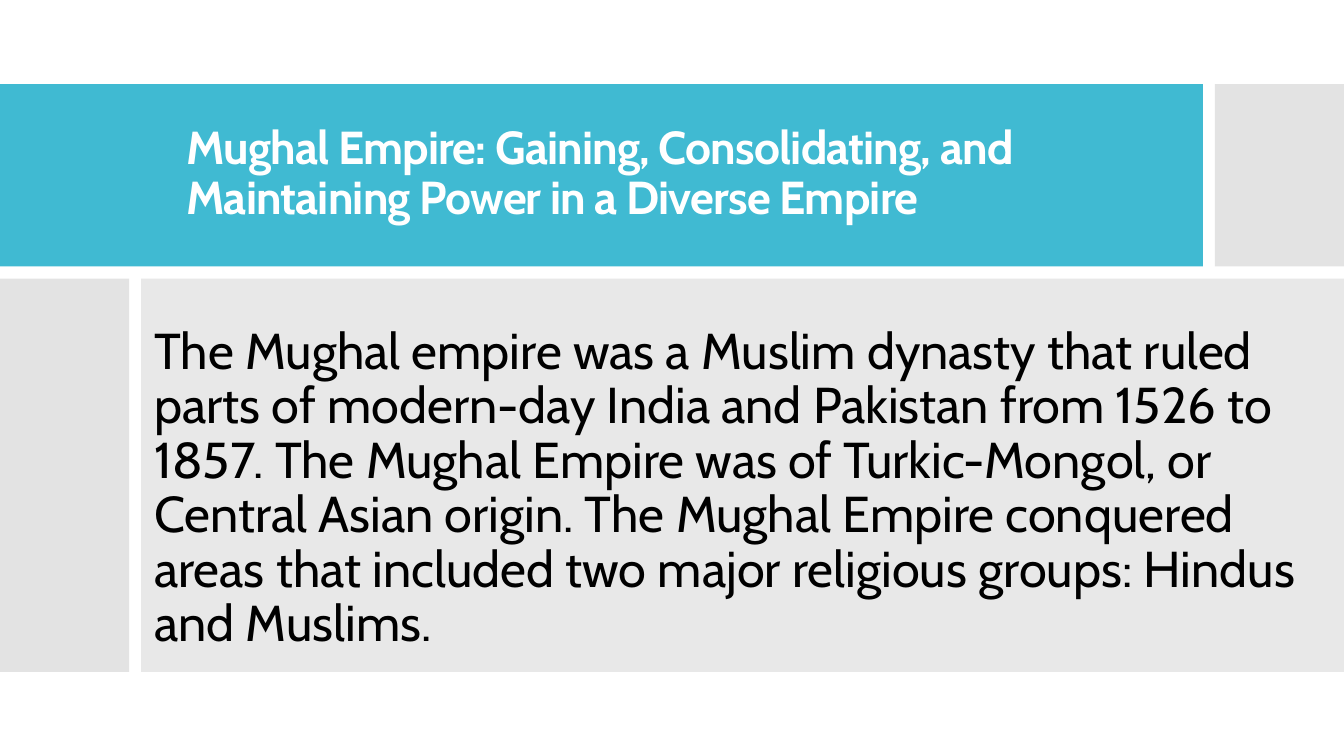
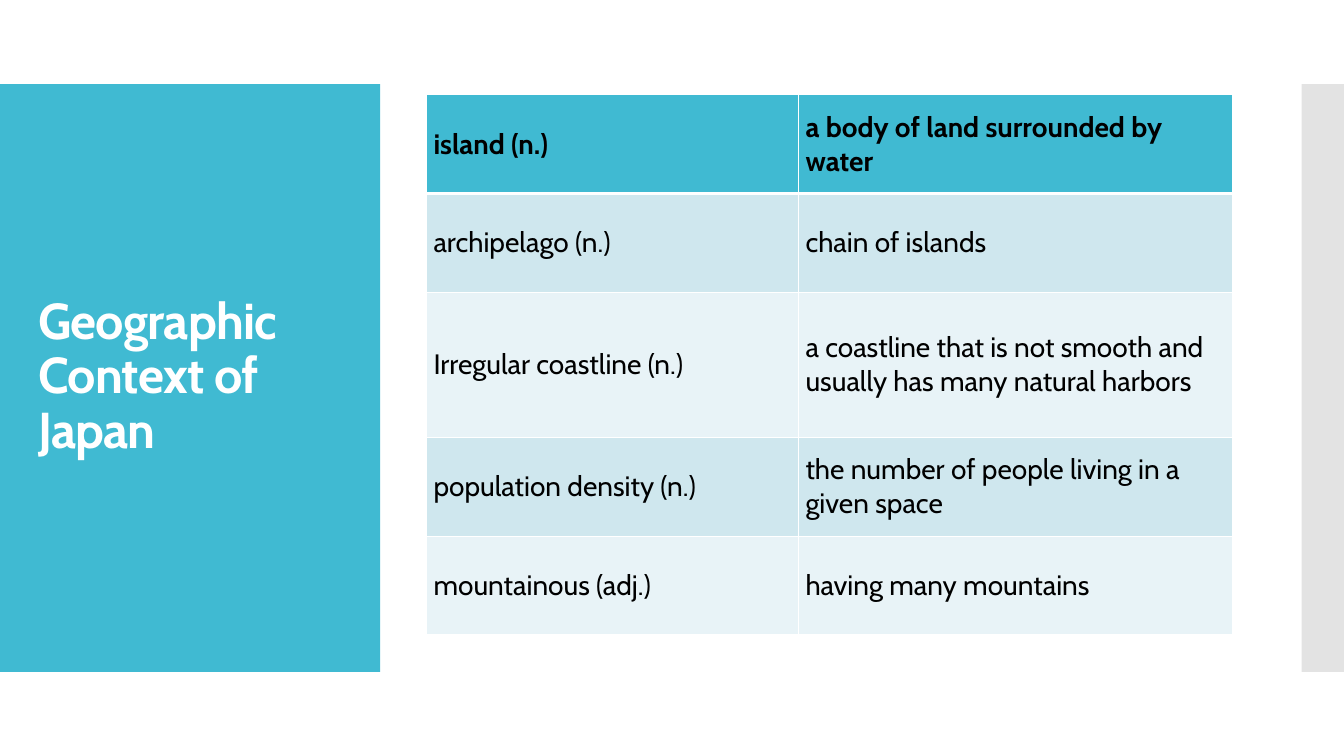
"""Build two history slides: an empire overview and a vocabulary table."""
from lxml import etree
from pptx import Presentation
from pptx.dml.color import RGBColor
from pptx.enum.shapes import MSO_SHAPE
from pptx.enum.text import MSO_ANCHOR, MSO_AUTO_SIZE, PP_ALIGN
from pptx.oxml.ns import qn
from pptx.util import Inches, Pt

RECTANGLE = MSO_SHAPE.RECTANGLE
MIDDLE = MSO_ANCHOR.MIDDLE
LEFT = PP_ALIGN.LEFT
NO_AUTOFIT = MSO_AUTO_SIZE.NONE

TEAL = RGBColor(0x40, 0xBA, 0xD2)
GRAY = RGBColor(0xC8, 0xC8, 0xC8)
LIGHT_GRAY = RGBColor(0xD9, 0xD9, 0xD9)
WHITE = RGBColor(0xFF, 0xFF, 0xFF)
BLACK = RGBColor(0x00, 0x00, 0x00)
ROW_TINTS = (RGBColor(0xE8, 0xF3, 0xF7), RGBColor(0xCF, 0xE7, 0xEE))
FONT = "Cabin"

SLIDE_WIDTH, SLIDE_HEIGHT = 13.33, 7.5
BAND_TOP = SLIDE_HEIGHT / 9
BAND_HEIGHT = SLIDE_HEIGHT * 7 / 9
BAND_BOTTOM = BAND_TOP + BAND_HEIGHT
GAP = 0.12
TITLE_BAND_WIDTH, TITLE_BAND_HEIGHT = 11.93, 1.81
BODY_TOP = BAND_TOP + TITLE_BAND_HEIGHT + GAP
SIDE_BLOCK_WIDTH = 1.28
SIDE_TITLE_WIDTH, EDGE_WIDTH = 3.77, 0.42

OVERVIEW = (
    "The Mughal empire was a Muslim dynasty that ruled parts of modern-day "
    "India and Pakistan from 1526 to 1857. The Mughal Empire was of "
    "Turkic-Mongol, or Central Asian origin. The Mughal Empire conquered "
    "areas that included two major religious groups: Hindus and Muslims."
)
VOCABULARY = (
    ("island (n.)", "a body of land surrounded by water"),
    ("archipelago (n.)", "chain of islands"),
    ("Irregular coastline (n.)",
     "a coastline that is not smooth and usually has many natural harbors"),
    ("population density (n.)", "the number of people living in a given space"),
    ("mountainous (adj.)", "having many mountains"),
)
COLUMN_WIDTHS = (3.69, 4.31)
ROW_HEIGHT, TALL_ROW_HEIGHT, TALL_ROW = 0.98, 1.44, 2


def write_text(text_frame, text, *, size, color=BLACK, bold=False,
               spacing=0, line_spacing=None):
    """Write one left-aligned paragraph with the given format."""
    paragraph = text_frame.paragraphs[0]
    paragraph.alignment = LEFT
    paragraph.space_before = Pt(0)
    paragraph.line_spacing = line_spacing
    run = paragraph.add_run()
    run.text = text
    run.font.name = FONT
    run.font.size = Pt(size)
    run.font.bold = bold
    run.font.color.rgb = color
    if spacing:
        run.font._element.set("spc", str(round(spacing * 100)))


def add_panel(slide, left, top, width, height, color, opacity=100):
    """Add a borderless rectangle behind the placeholders."""
    panel = slide.shapes.add_shape(
        RECTANGLE, Inches(left), Inches(top), Inches(width), Inches(height))
    panel.shadow.inherit = False
    panel.fill.solid()
    panel.fill.fore_color.rgb = color
    panel.line.fill.background()
    if opacity < 100:
        fill_color = panel.element.spPr.find(qn("a:solidFill"))[0]
        etree.SubElement(fill_color, qn("a:alpha"), val=str(opacity * 1000))
    slide.shapes.element.insert(2, panel.element)


def fill_placeholder(placeholder, box, text, **text_format):
    """Move a placeholder to a box and fill it with centred-height text."""
    placeholder.left, placeholder.top, placeholder.width, placeholder.height = (
        Inches(length) for length in box)
    text_frame = placeholder.text_frame
    text_frame.word_wrap = True
    text_frame.auto_size = NO_AUTOFIT
    text_frame.vertical_anchor = MIDDLE
    write_text(text_frame, text, line_spacing=0.9, **text_format)


def set_title(slide, box, text, size):
    """Fill the title in the shared style."""
    fill_placeholder(slide.shapes.title, box, text, size=size, color=WHITE,
                     bold=True, spacing=-0.6)


def set_body(slide, box, text, size):
    """Fill the body placeholder with a paragraph that has no bullet."""
    body = slide.placeholders[1]
    properties = body.text_frame.paragraphs[0]._p.get_or_add_pPr()
    properties.set("marL", "0")
    properties.set("indent", "0")
    etree.SubElement(properties, qn("a:buNone"))
    fill_placeholder(body, box, text, size=size)


def set_borders(cell, top, bottom):
    """Draw white borders around a cell, with widths in points."""
    properties = cell._tc.get_or_add_tcPr()
    sides = (("a:lnL", 1), ("a:lnR", 1), ("a:lnT", top), ("a:lnB", bottom))
    for index, (tag, width) in enumerate(sides):
        line = etree.Element(qn(tag), w=str(Pt(width)))
        fill = etree.SubElement(line, qn("a:solidFill"))
        etree.SubElement(fill, qn("a:srgbClr"), val=str(WHITE))
        properties.insert(index, line)


def add_vocabulary_table(slide, left, top):
    """Add the table of terms and their meanings."""
    heights = [TALL_ROW_HEIGHT if row == TALL_ROW else ROW_HEIGHT
               for row in range(len(VOCABULARY))]
    table = slide.shapes.add_table(
        len(VOCABULARY), len(COLUMN_WIDTHS), Inches(left), Inches(top),
        Inches(sum(COLUMN_WIDTHS)), Inches(sum(heights))).table
    for column, width in zip(table.columns, COLUMN_WIDTHS):
        column.width = Inches(width)
    for row, height in zip(table.rows, heights):
        row.height = Inches(height)
    for row_index, texts in enumerate(VOCABULARY):
        is_header = row_index == 0
        for column_index, text in enumerate(texts):
            cell = table.cell(row_index, column_index)
            cell.vertical_anchor = MIDDLE
            cell.margin_left = cell.margin_right = Inches(0.07)
            cell.margin_top = cell.margin_bottom = Inches(0.07)
            cell.fill.solid()
            cell.fill.fore_color.rgb = TEAL if is_header else ROW_TINTS[row_index % 2]
            set_borders(cell, top=3 if row_index == 1 else 1,
                        bottom=3 if is_header else 1)
            write_text(cell.text_frame, text, size=20, bold=is_header)


def build_overview_slide(presentation):
    """Build the slide with a title band above a body panel."""
    slide = presentation.slides.add_slide(presentation.slide_layouts[1])
    corner_left = TITLE_BAND_WIDTH + GAP
    body_left = SIDE_BLOCK_WIDTH + GAP
    body_height = BAND_BOTTOM - BODY_TOP
    add_panel(slide, 0, BAND_TOP, TITLE_BAND_WIDTH, TITLE_BAND_HEIGHT, TEAL)
    add_panel(slide, corner_left, BAND_TOP, SLIDE_WIDTH - corner_left,
              TITLE_BAND_HEIGHT, GRAY, 50)
    add_panel(slide, 0, BODY_TOP, SIDE_BLOCK_WIDTH, body_height, GRAY, 50)
    add_panel(slide, body_left, BODY_TOP, SLIDE_WIDTH - body_left, body_height,
              LIGHT_GRAY, 60)
    set_title(slide, (1.75, 1.19, 9.82, 1.09),
              "Mughal Empire: Gaining, Consolidating, and Maintaining Power "
              "in a Diverse Empire", 33)
    set_body(slide, (1.43, BODY_TOP, 11.85, 4.18), OVERVIEW, 36)


def build_vocabulary_slide(presentation):
    """Build the slide with a side title and a vocabulary table."""
    slide = presentation.slides.add_slide(presentation.slide_layouts[5])
    add_panel(slide, 0, BAND_TOP, SIDE_TITLE_WIDTH, BAND_HEIGHT, TEAL)
    add_panel(slide, SLIDE_WIDTH - EDGE_WIDTH, BAND_TOP, EDGE_WIDTH,
              BAND_HEIGHT, GRAY, 50)
    set_title(slide, (0.28, 1.23, 3.22, 5.03), "Geographic Context of Japan", 36)
    add_vocabulary_table(slide, 4.23, 0.94)


def main():
    """Build and save the presentation."""
    presentation = Presentation()
    presentation.slide_width = Inches(SLIDE_WIDTH)
    presentation.slide_height = Inches(SLIDE_HEIGHT)
    build_overview_slide(presentation)
    build_vocabulary_slide(presentation)
    presentation.save("out.pptx")


if __name__ == "__main__":
    main()
